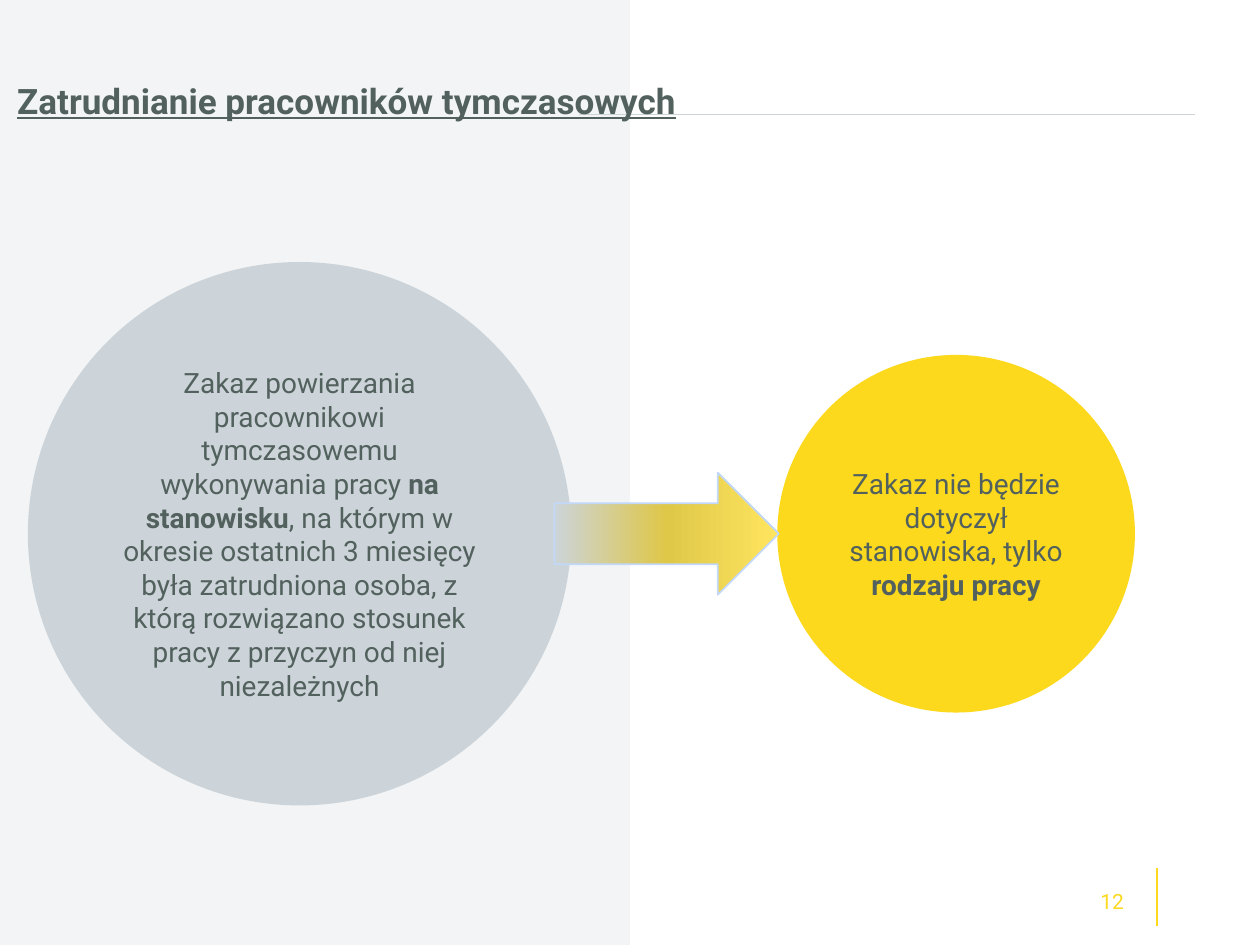
from lxml.etree import SubElement
from pptx import Presentation
from pptx.dml.color import RGBColor
from pptx.enum.shapes import MSO_CONNECTOR, MSO_SHAPE
from pptx.enum.text import MSO_ANCHOR, MSO_AUTO_SIZE, PP_ALIGN
from pptx.oxml.ns import qn
from pptx.util import Cm, Pt

YELLOW, GREY, PALE, INK = "FCD91D", "CCD4D9", "F2F4F6", "52615D"
CENTRE_Y = 10.76


def colour(value):
    """Turn a hex string into a colour."""
    return RGBColor.from_string(value)


def write(frame, runs, size, ink, align=PP_ALIGN.CENTER, **extra):
    """Write (text, bold) runs into the first paragraph of a frame."""
    frame.word_wrap = True
    frame.auto_size = MSO_AUTO_SIZE.NONE
    frame.vertical_anchor = MSO_ANCHOR.MIDDLE
    paragraph = frame.paragraphs[0]
    paragraph.alignment = align
    for text, bold in runs:
        run = paragraph.add_run()
        run.text = text
        style = {"name": "Roboto", "size": Pt(size), "bold": bold, **extra}
        for name, value in style.items():
            setattr(run.font, name, value)
        run.font.color.rgb = colour(ink)
    return paragraph


def add_figure(slide, kind, box, fill=None, line=None):
    """Add a preset shape with an optional plain fill and outline."""
    figure = slide.shapes.add_shape(kind, *map(Cm, box))
    figure.shadow.inherit = False
    if fill:
        figure.fill.solid()
        figure.fill.fore_color.rgb = colour(fill)
    if line:
        figure.line.color.rgb = colour(line)
        figure.line.width = Pt(1)
    else:
        figure.line.fill.background()
    return figure


def add_rule(slide, ends, ink, width):
    """Draw a straight rule between two points."""
    rule = slide.shapes.add_connector(MSO_CONNECTOR.STRAIGHT, *map(Cm, ends))
    rule.line.color.rgb = colour(ink)
    rule.line.width = Pt(width)
    SubElement(rule._element.spPr, qn("a:effectLst"))


def add_backdrop(slide, width, height):
    """Fill the left half and draw the two rules."""
    add_figure(slide, MSO_SHAPE.RECTANGLE, (0, 0, width / 2, height), PALE)
    add_rule(slide, (width - 2.08, 17.5, width - 2.08, 18.67), YELLOW, 1.5)
    add_rule(slide, (11.68, 2.31, width - 1.32, 2.31), GREY, 0.75)


def add_page_number(slide, box, number):
    """Place the page number at the right of its box."""
    page = slide.shapes.add_textbox(*map(Cm, box))
    write(page.text_frame, [(number, False)], 12, YELLOW, PP_ALIGN.RIGHT)


def add_heading(slide, box, text):
    """Place the title above the backdrop."""
    heading = slide.shapes.title
    for name, value in zip(("left", "top", "width", "height"), box):
        setattr(heading, name, Cm(value))
    slide.shapes._spTree.append(heading._element)
    paragraph = write(heading.text_frame, [(text, True)], 20, INK, underline=True)
    paragraph.line_spacing = 0.9


def add_circle(slide, left, diameter, runs, fill, line=None):
    """Add a text circle centred on the row."""
    box = (left, CENTRE_Y - diameter / 2, diameter, diameter)
    circle = add_figure(slide, MSO_SHAPE.OVAL, box, fill, line)
    write(circle.text_frame, runs, 16, INK)


def add_gradient_arrow(slide, left, width, height, stops):
    """Add a right arrow with a horizontal gradient through the stops."""
    box = (left, CENTRE_Y - height / 2, width, height)
    arrow = add_figure(slide, MSO_SHAPE.RIGHT_ARROW, box, line="C2D8F8")
    arrow.fill.gradient()
    arrow.fill.gradient_angle = 0
    stop_list = arrow._element.spPr.find(qn("a:gradFill")).find(qn("a:gsLst"))
    for stop in list(stop_list):
        stop_list.remove(stop)
    for percent, value in stops:
        stop = SubElement(stop_list, qn("a:gs"), pos=str(percent * 1000))
        SubElement(stop, qn("a:srgbClr"), val=value)


def main():
    """Build and save the slide."""
    deck = Presentation()
    deck.slide_width, deck.slide_height = Cm(25.4), Cm(19.05)
    slide = deck.slides.add_slide(deck.slide_layouts[5])
    add_backdrop(slide, 25.4, 19.05)
    add_page_number(slide, (17.93, 17.65, 4.98, 1.02), "12")
    add_heading(slide, (-0.58, 0.74, 15.14, 2.69), "Zatrudnianie pracowników tymczasowych")
    exception = [("Zakaz nie będzie dotyczył stanowiska, tylko ", False), ("rodzaju pracy", True)]
    ban = [
        ("Zakaz powierzania pracownikowi tymczasowemu wykonywania pracy ", False),
        ("na stanowisku", True),
        (", na którym w okresie ostatnich 3 miesięcy była zatrudniona osoba, "
         "z którą rozwiązano stosunek pracy z przyczyn od niej niezależnych", False),
    ]
    add_circle(slide, 15.67, 7.21, exception, YELLOW)
    add_circle(slide, 0.58, 10.92, ban, GREY, GREY)
    add_gradient_arrow(slide, 11.18, 4.52, 2.46, [(0, GREY), (50, "DFC748"), (100, "FFE55F")])
    deck.save("out.pptx")


if __name__ == "__main__":
    main()
